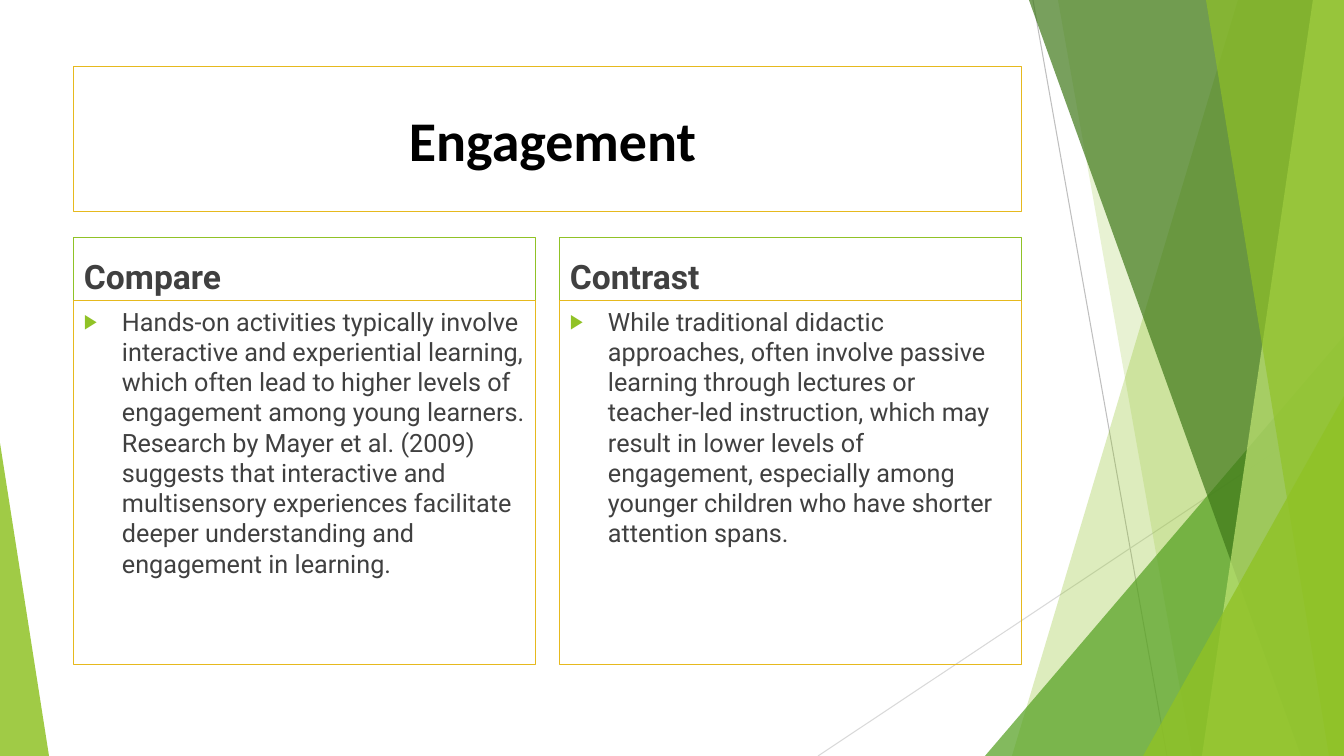
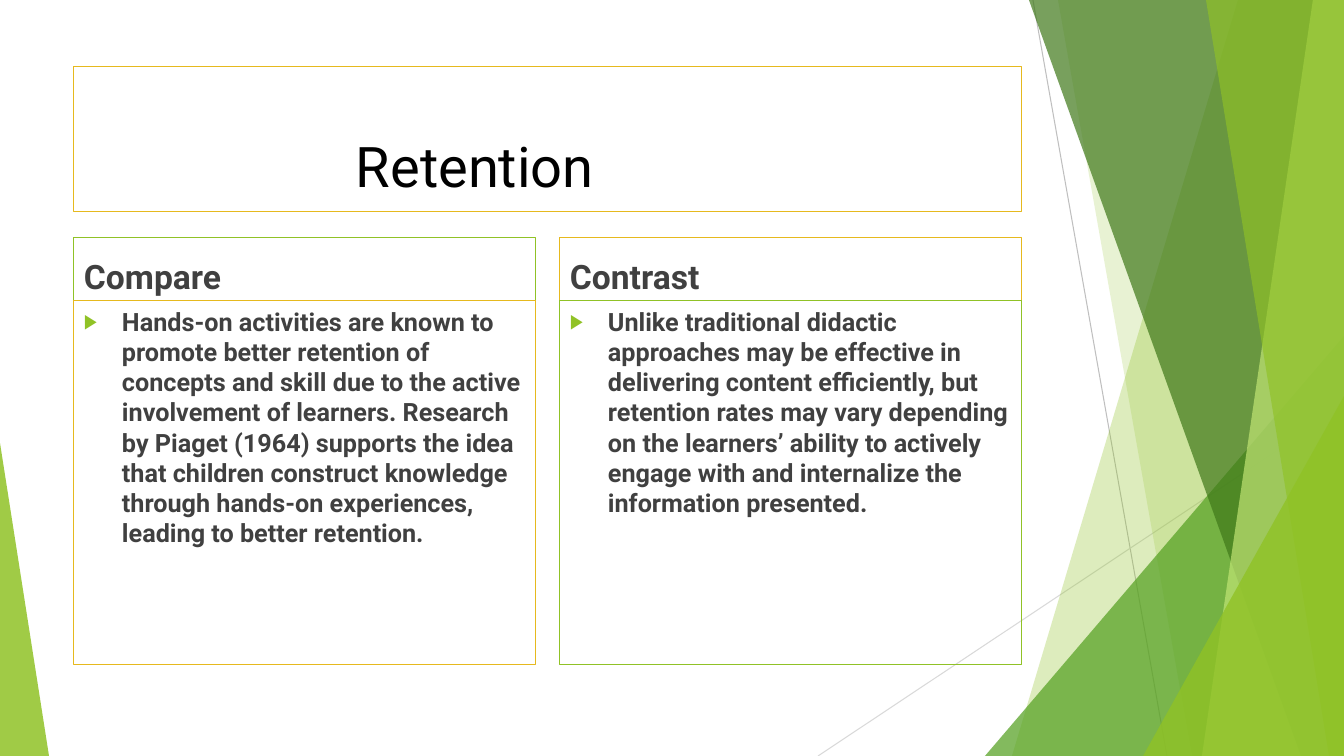
from dataclasses import dataclass

from lxml import etree
from pptx import Presentation
from pptx import util as u
from pptx.dml.color import RGBColor
from pptx.enum import shapes, text
from pptx.oxml import ns

SLIDES = [
    {
        "title": {"words": "Engagement", "font": "Calibri", "bold": True, "inset": (335, 39)},
        "body_bold": False,
        "columns": [
            {"heading": "Compare", "borders": ("lime", "gold"),
             "body": "Hands-on activities typically involve interactive and experiential "
                     "learning, which often lead to higher levels of engagement among young "
                     "learners. Research by Mayer et al. (2009) suggests that interactive and "
                     "multisensory experiences facilitate deeper understanding and engagement "
                     "in learning."},
            {"heading": "Contrast", "borders": ("lime", "gold"),
             "body": "While traditional didactic approaches, often involve passive learning "
                     "through lectures or teacher-led instruction, which may result in lower "
                     "levels of engagement, especially among younger children who have shorter "
                     "attention spans."},
        ],
    },
    {
        "title": {"words": "Retention", "font": "Roboto", "bold": False, "inset": (282, 66)},
        "body_bold": True,
        "columns": [
            {"heading": "Compare", "borders": ("lime", "gold"),
             "body": "Hands-on activities are known to promote better retention of concepts "
                     "and skill due to the active involvement of learners. Research by Piaget "
                     "(1964) supports the idea that children construct knowledge through "
                     "hands-on experiences, leading to better retention."},
            {"heading": "Contrast", "borders": ("gold", "lime"),
             "body": "Unlike traditional didactic approaches may be effective in delivering "
                     "content efficiently, but retention rates may vary depending on the "
                     "learners’ ability to actively engage with and internalize the "
                     "information presented."},
        ],
    },
]


@dataclass(frozen=True)
class Theme:
    lime: str = "90C226"
    green: str = "54A021"
    forest: str = "3F7819"
    pale: str = "C0E474"
    gold: str = "E6B91E"
    ink: str = "404040"
    black: str = "000000"
    grey: str = "BFBFBF"
    light_grey: str = "D9D9D9"
    font: str = "Roboto"
    title_size: int = 40
    heading_size: int = 24
    body_size: int = 18
    line_width: float = 0.75


THEME = Theme()
WIDTH, HEIGHT = 1344, 756
SCALE = u.Inches(40 / 3) / WIDTH

LEFT, CONTENT_WIDTH, GAP = 74, 948, 24
COLUMN_WIDTH = (CONTENT_WIDTH - GAP) // 2
TITLE_TOP, TITLE_HEIGHT = 67, 145
HEADING_TOP, HEADING_HEIGHT, BODY_HEIGHT = 238, 63, 364
INSET = (10, 5)
BULLET_INDENT = 38

# Lines: start, end, colour
LINES = [((1033, 0), (1167, HEIGHT), THEME.grey),
         ((WIDTH, 406), (818, HEIGHT), THEME.light_grey)]
# Bands reach the right edge: ("band", top x, bottom x, colour, opacity)
# Triangles stand on the bottom edge: ("triangle", left, width, height, apex, colour, opacity)
FACETS = [
    ("band", 1238, 1012, THEME.lime, 30),
    ("band", 1058, 1192, THEME.lime, 20),
    ("triangle", 985, 359, 420, 1, THEME.green, 72),
    ("band", 1029, 1301, THEME.forest, 70),
    ("band", 1313, 1202, THEME.pale, 70),
    ("band", 1206, 1329, THEME.lime, 65),
    ("triangle", 1143, 201, 360, 1, THEME.lime, 80),
    ("triangle", 0, 49, 313, 0, THEME.lime, 85),
]


def px(length):
    return u.Emu(round(length * SCALE))


def add_element(parent, tag, **attributes):
    return etree.SubElement(parent, ns.qn(tag), attributes)


def fill_facet(shape, color, opacity):
    shape.shadow.inherit = False
    shape.line.fill.background()
    shape.fill.solid()
    shape.fill.fore_color.rgb = RGBColor.from_string(color)
    color_node = shape.fill._xPr.find(".//" + ns.qn("a:srgbClr"))
    add_element(color_node, "a:alpha", val=str(opacity * 1000))


def add_band(slide, top_x, bottom_x):
    builder = slide.shapes.build_freeform(top_x, 0, scale=SCALE)
    builder.add_line_segments([(WIDTH, 0), (WIDTH, HEIGHT), (bottom_x, HEIGHT)])
    return builder.convert_to_shape()


def add_triangle(slide, left, width, height, apex):
    shape = slide.shapes.add_shape(shapes.MSO_SHAPE.ISOSCELES_TRIANGLE,
                                   px(left), px(HEIGHT - height), px(width), px(height))
    shape.adjustments[0] = apex
    return shape


def add_backdrop(slide):
    for start, end, color in LINES:
        line = slide.shapes.add_connector(shapes.MSO_CONNECTOR.STRAIGHT,
                                          *map(px, start + end))
        line.line.color.rgb = RGBColor.from_string(color)
        line.line.width = u.Pt(THEME.line_width)
        add_element(line._element.spPr, "a:effectLst")
    builders = {"band": add_band, "triangle": add_triangle}
    for kind, *geometry, color, opacity in FACETS:
        fill_facet(builders[kind](slide, *geometry), color, opacity)


def add_bullet(paragraph):
    properties = paragraph._p.get_or_add_pPr()
    indent = px(BULLET_INDENT)
    properties.set("marL", str(indent))
    properties.set("indent", str(-indent))
    add_element(add_element(properties, "a:buClr"), "a:srgbClr", val=THEME.lime)
    add_element(properties, "a:buSzPct", val="80000")
    add_element(properties, "a:buFont", typeface="Arial")
    add_element(properties, "a:buChar", char="▶")


def add_text_box(slide, box, border, words, size, bold=False, font=THEME.font,
                 color=THEME.ink, inset=INSET, anchor=text.MSO_ANCHOR.TOP):
    """Add an outlined text box and return its paragraph."""
    shape = slide.shapes.add_textbox(*map(px, box))
    shape.line.color.rgb = RGBColor.from_string(border)
    shape.line.width = u.Pt(THEME.line_width)
    frame = shape.text_frame
    frame.word_wrap = True
    frame.vertical_anchor = anchor
    frame.margin_left, frame.margin_top = map(px, inset)
    frame.margin_right, frame.margin_bottom = map(px, INSET)
    paragraph = frame.paragraphs[0]
    run = paragraph.add_run()
    run.text = words
    run.font.name = font
    run.font.size = u.Pt(size)
    run.font.bold = bold
    run.font.color.rgb = RGBColor.from_string(color)
    return paragraph


def add_column(slide, index, column, body_bold):
    left = LEFT + index * (COLUMN_WIDTH + GAP)
    heading_border, body_border = (getattr(THEME, name) for name in column["borders"])
    add_text_box(slide, (left, HEADING_TOP, COLUMN_WIDTH, HEADING_HEIGHT), heading_border,
                 column["heading"], THEME.heading_size, bold=True,
                 anchor=text.MSO_ANCHOR.BOTTOM)
    body = add_text_box(slide,
                        (left, HEADING_TOP + HEADING_HEIGHT, COLUMN_WIDTH, BODY_HEIGHT),
                        body_border, column["body"], THEME.body_size, bold=body_bold)
    add_bullet(body)


def main():
    presentation = Presentation()
    presentation.slide_width, presentation.slide_height = px(WIDTH), px(HEIGHT)
    for content in SLIDES:
        slide = presentation.slides.add_slide(presentation.slide_layouts[6])
        add_backdrop(slide)
        add_text_box(slide, (LEFT, TITLE_TOP, CONTENT_WIDTH, TITLE_HEIGHT), THEME.gold,
                     size=THEME.title_size, color=THEME.black, **content["title"])
        for index, column in enumerate(content["columns"]):
            add_column(slide, index, column, content["body_bold"])
    presentation.save("out.pptx")


if __name__ == "__main__":
    main()
